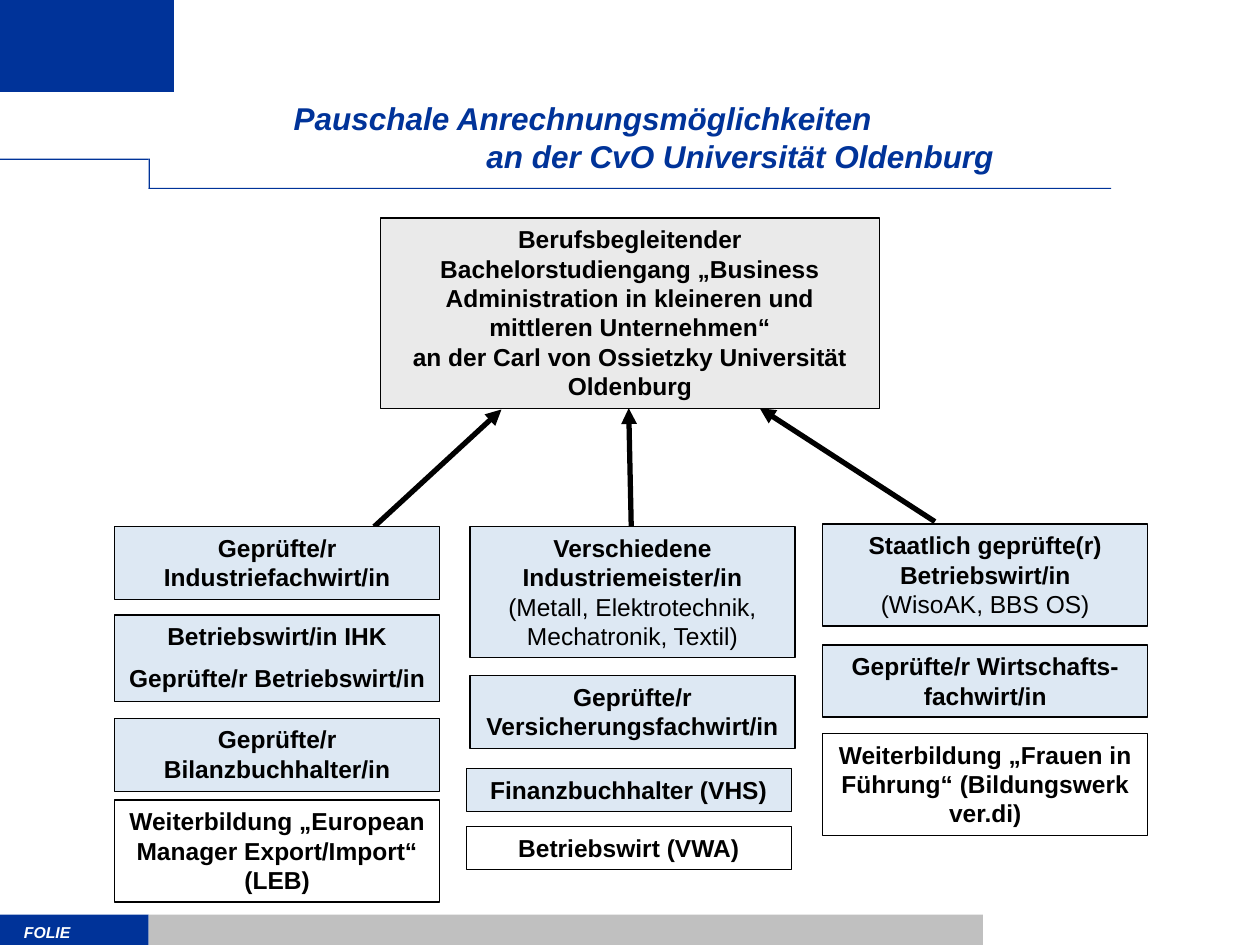
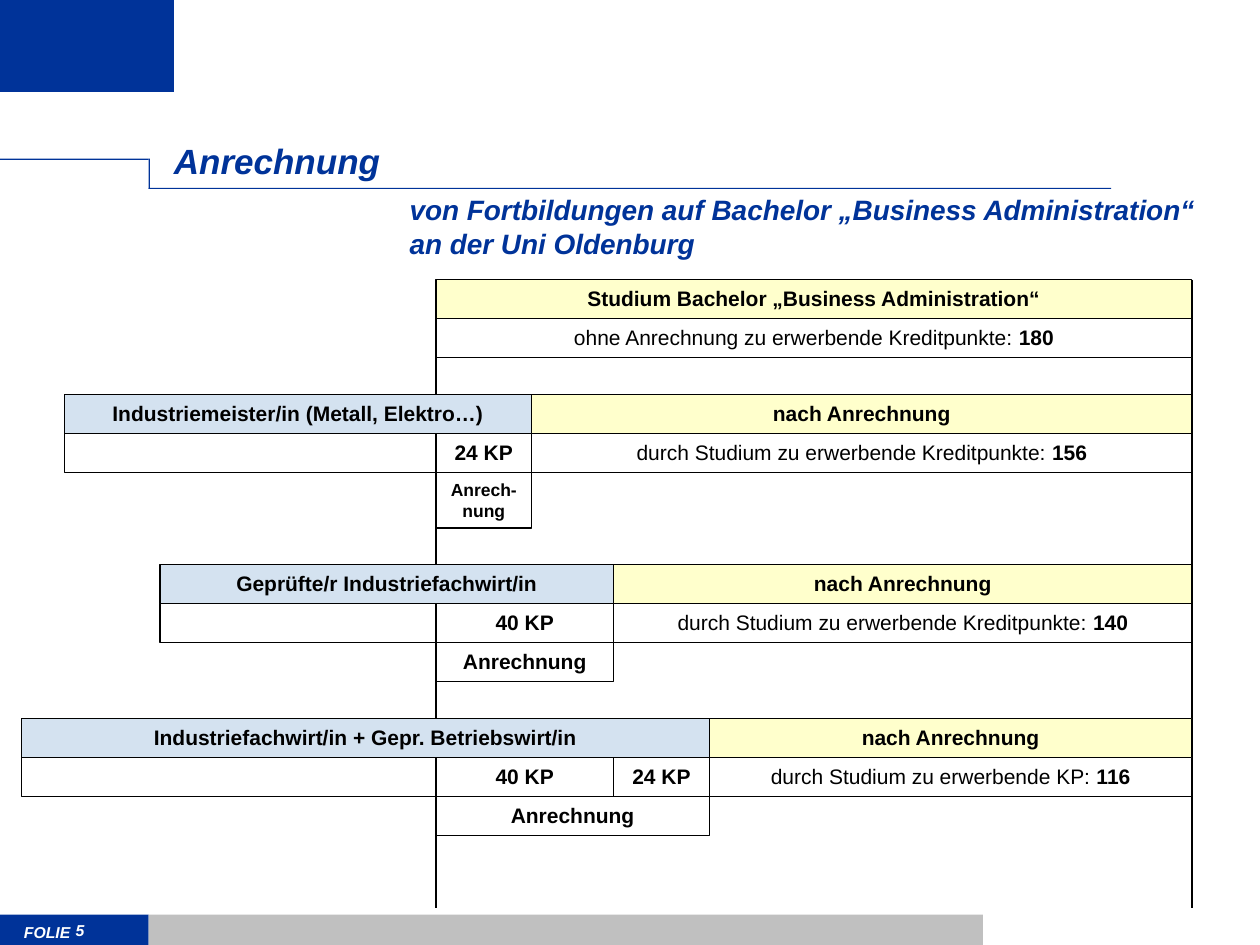
from typing import NamedTuple, Sequence

from lxml import etree
from pptx import Presentation
from pptx.dml.color import RGBColor
from pptx.enum import shapes, text
from pptx.oxml import ns
from pptx.util import Inches, Pt

FONT = "Arial"
NAVY = RGBColor(0x00, 0x33, 0x99)
GREY = RGBColor(0xC0, 0xC0, 0xC0)
PALE_GREY = RGBColor(0xEA, 0xEA, 0xEA)
PALE_BLUE = RGBColor(0xDD, 0xE8, 0xF3)
BLUE = RGBColor(0xD4, 0xE2, 0xF0)
YELLOW = RGBColor(0xFF, 0xFF, 0xCC)
WHITE = RGBColor(0xFF, 0xFF, 0xFF)
BLACK = RGBColor(0x00, 0x00, 0x00)


class Box(NamedTuple):
    left: float
    top: float
    width: float
    height: float


class Run(NamedTuple):
    text: str
    bold: bool = True


class Degree(NamedTuple):
    """A qualification on the overview slide."""
    top: float
    height: float
    paragraphs: Sequence
    fill: RGBColor = PALE_BLUE
    left: float | None = None


class Route(NamedTuple):
    """A qualification with its credits and what is left to study."""
    label: str
    left: float
    top: float
    credits: Sequence[int]
    remaining_label: str
    remaining: int
    caption: str = "Anrechnung"
    caption_size: int = 12
    caption_height: float = 0.31


# Bands and rules of the slide frame
FRAME = [
    (Box(0, 7.26, 1.18, 0.24), NAVY),
    (Box(0, 0, 1.38, 0.73), NAVY),
    (Box(0, 1.26, 1.18, 0.01), NAVY),
    (Box(1.18, 1.49, 7.64, 0.01), NAVY),
    (Box(1.18, 1.26, 0.01, 0.24), NAVY),
    (Box(1.18, 7.26, 6.62, 0.24), GREY),
]

# Overview slide
DEGREE_WIDTH = 2.58
DEGREE_COLUMNS = {
    0.91: [
        Degree(4.18, 0.58, ["Geprüfte/r Industriefachwirt/in"]),
        Degree(4.88, 0.69, ["Betriebswirt/in IHK", "Geprüfte/r Betriebswirt/in"]),
        Degree(5.7, 0.58, ["Geprüfte/r Bilanzbuchhalter/in"]),
        Degree(6.35, 0.81, ["Weiterbildung „European Manager Export/Import“ (LEB)"], WHITE),
    ],
    3.73: [
        Degree(4.18, 1.04, [[Run("Verschiedene Industriemeister/in\n"),
                             Run("(Metall, Elektrotechnik, Mechatronik, Textil)", False)]]),
        Degree(5.36, 0.58, ["Geprüfte/r Versicherungsfachwirt/in"]),
        Degree(6.1, 0.34, ["Finanzbuchhalter (VHS)"], left=3.7),
        Degree(6.56, 0.34, ["Betriebswirt (VWA)"], WHITE, left=3.7),
    ],
    6.53: [
        Degree(4.16, 0.81, [[Run("Staatlich geprüfte(r)\nBetriebswirt/in\n"),
                             Run("(WisoAK, BBS OS)", False)]]),
        Degree(5.12, 0.57, ["Geprüfte/r Wirtschafts-\nfachwirt/in"]),
        Degree(5.82, 0.81, ["Weiterbildung „Frauen in Führung“ (Bildungswerk ver.di)"], WHITE),
    ],
}
ARROWS = [((2.97, 4.18), (3.98, 3.25)),
          ((5.01, 4.18), (4.99, 3.24)),
          ((7.42, 4.14), (6.03, 3.24))]

# Credit slide
STUDY_START, STUDY_END = 3.46, 9.46
STUDY_TOP, STUDY_BOTTOM = 2.22, 7.21
ROW = 0.31
CREDIT_WIDTH = {24: 0.76, 40: 1.41}
POINTS_LEFT = "durch Studium zu erwerbende Kreditpunkte: "
ROUTES = [
    Route("Industriemeister/in (Metall, Elektro…)", 0.51, 3.13, [24],
          POINTS_LEFT, 156, "Anrech-nung", 10, 0.44),
    Route("Geprüfte/r Industriefachwirt/in", 1.27, 4.48, [40], POINTS_LEFT, 140),
    Route("Industriefachwirt/in + Gepr. Betriebswirt/in", 0.17, 5.7, [40, 24],
          "durch Studium zu erwerbende KP: ", 116),
]


def inches(box: Sequence[float]) -> list:
    return [Inches(value) for value in box]


def write(frame, paragraphs: Sequence, *, size: float, color=BLACK, italic=False,
          align=text.PP_ALIGN.LEFT, anchor=text.MSO_ANCHOR.TOP,
          inset: tuple[float, float] = (0, 0), indents: Sequence[float] = (),
          gap: float = 0) -> None:
    """Fill a text frame; a paragraph is a string (bold) or a list of runs."""
    frame.word_wrap = True
    frame.vertical_anchor = anchor
    frame.margin_left = frame.margin_right = Inches(inset[0])
    frame.margin_top = frame.margin_bottom = Inches(inset[1])
    for index, content in enumerate(paragraphs):
        paragraph = frame.add_paragraph() if index else frame.paragraphs[0]
        paragraph.alignment = align
        if index and gap:
            paragraph.space_before = Pt(gap)
        if indents:
            paragraph._p.get_or_add_pPr().set("marL", str(Inches(indents[index])))
        for part in [Run(content)] if isinstance(content, str) else content:
            for number, line in enumerate(part.text.split("\n")):
                if number:
                    paragraph.add_line_break()
                if not line:
                    continue
                run = paragraph.add_run()
                run.text = line
                font = run.font
                font.name, font.size = FONT, Pt(size)
                font.bold, font.italic = part.bold, italic
                font.color.rgb = color


def add_text(slide, box: Box, paragraphs: Sequence, **style) -> None:
    write(slide.shapes.add_textbox(*inches(box)).text_frame, paragraphs, **style)


def add_band(slide, box: Box, fill: RGBColor):
    band = slide.shapes.add_shape(shapes.MSO_SHAPE.RECTANGLE, *inches(box))
    band.shadow.inherit = False
    band.fill.solid()
    band.fill.fore_color.rgb = fill
    band.line.fill.background()
    return band


def add_box(slide, box: Box, fill: RGBColor, paragraphs: Sequence = (), size: float = 12) -> None:
    """Outlined rectangle with centred text."""
    panel = add_band(slide, box, fill)
    panel.line.color.rgb = BLACK
    panel.line.width = Pt(0.75)
    if paragraphs:
        write(panel.text_frame, paragraphs, size=size, align=text.PP_ALIGN.CENTER,
              inset=(0.1, 0.05), gap=size / 2)


def add_line(slide, start: tuple, end: tuple, width: float, arrow: bool = False) -> None:
    line = slide.shapes.add_connector(shapes.MSO_CONNECTOR.STRAIGHT, *inches(start + end))
    line.line.color.rgb = BLACK
    line.line.width = Pt(width)
    properties = line._element.spPr
    if arrow:
        etree.SubElement(line.line._get_or_add_ln(), ns.qn("a:tailEnd"), type="triangle")
    etree.SubElement(properties, ns.qn("a:effectLst"))


def add_slide(deck, title: Sequence[str], title_box: Box, **title_style):
    """Blank slide with frame, footer label and title."""
    slide = deck.slides.add_slide(deck.slide_layouts[6])
    for box, fill in FRAME:
        add_band(slide, box, fill)
    add_footer(slide, Box(0.19, 7.32, 0.64, 0.15), "FOLIE")
    add_text(slide, title_box, title, color=NAVY, italic=True,
             anchor=text.MSO_ANCHOR.BOTTOM, **title_style)
    return slide


def add_footer(slide, box: Box, label: str) -> None:
    add_text(slide, box, [label], size=9, color=WHITE, italic=True,
             anchor=text.MSO_ANCHOR.BOTTOM)


def build_overview(deck) -> None:
    slide = add_slide(
        deck, ["Pauschale Anrechnungsmöglichkeiten", "an der CvO Universität Oldenburg"],
        Box(1.09, 0.66, 8.5, 0.73), size=18, indents=(1.24, 2.77))
    add_box(slide, Box(3.02, 1.73, 3.96, 1.51), PALE_GREY,
            ["Berufsbegleitender Bachelorstudiengang „Business Administration in kleineren "
             "und mittleren Unternehmen“\nan der Carl von Ossietzky Universität\nOldenburg"], 14)
    for start, end in ARROWS:
        add_line(slide, start, end, 3, arrow=True)
    for column, degrees in DEGREE_COLUMNS.items():
        for degree in degrees:
            box = Box(degree.left or column, degree.top, DEGREE_WIDTH, degree.height)
            add_box(slide, box, degree.fill, degree.paragraphs, 14)


def add_route(slide, route: Route) -> None:
    widths = [CREDIT_WIDTH[points] for points in route.credits]
    credited = sum(widths)
    split = STUDY_START + credited
    second, third = route.top + ROW, route.top + 2 * ROW

    # Qualification and remaining study
    add_box(slide, Box(route.left, route.top, split - route.left, ROW), BLUE, [route.label])
    add_box(slide, Box(route.left, second, STUDY_START + widths[0] - route.left, ROW), WHITE)
    add_box(slide, Box(split, route.top, STUDY_END - split, ROW), YELLOW, ["nach Anrechnung"])
    add_box(slide, Box(split, second, STUDY_END - split, ROW), WHITE,
            [[Run(route.remaining_label, False), Run(str(route.remaining))]])

    # Credited points
    left = STUDY_START
    for points, width in zip(route.credits, widths):
        add_box(slide, Box(left, second, width, ROW), WHITE, [f"{points} KP"])
        left += width
    add_box(slide, Box(STUDY_START, third, credited, route.caption_height), WHITE,
            [route.caption], route.caption_size)


def build_credits(deck) -> None:
    slide = add_slide(deck, ["Anrechnung"], Box(1.38, 0.71, 8.5, 0.73), size=20)
    add_footer(slide, Box(0.6, 7.11, 0.41, 0.35), "5")
    add_text(slide, Box(3.25, 1.53, 6.29, 0.53),
             ["von Fortbildungen auf Bachelor „Business Administration“ an der Uni Oldenburg"],
             size=16, color=NAVY, italic=True)
    for edge in (STUDY_START, STUDY_END):
        add_line(slide, (edge, STUDY_TOP), (edge, STUDY_BOTTOM), 0.75)

    # Full study without credits
    full = Box(STUDY_START, STUDY_TOP, STUDY_END - STUDY_START, ROW)
    add_box(slide, full, YELLOW, ["Studium Bachelor „Business Administration“"])
    add_box(slide, full._replace(top=STUDY_TOP + ROW), WHITE,
            [[Run("ohne Anrechnung zu erwerbende Kreditpunkte: ", False), Run("180")]])
    for route in ROUTES:
        add_route(slide, route)


def main() -> None:
    deck = Presentation()
    deck.slide_width, deck.slide_height = Inches(10), Inches(7.5)
    build_overview(deck)
    build_credits(deck)
    deck.save("out.pptx")


if __name__ == "__main__":
    main()
